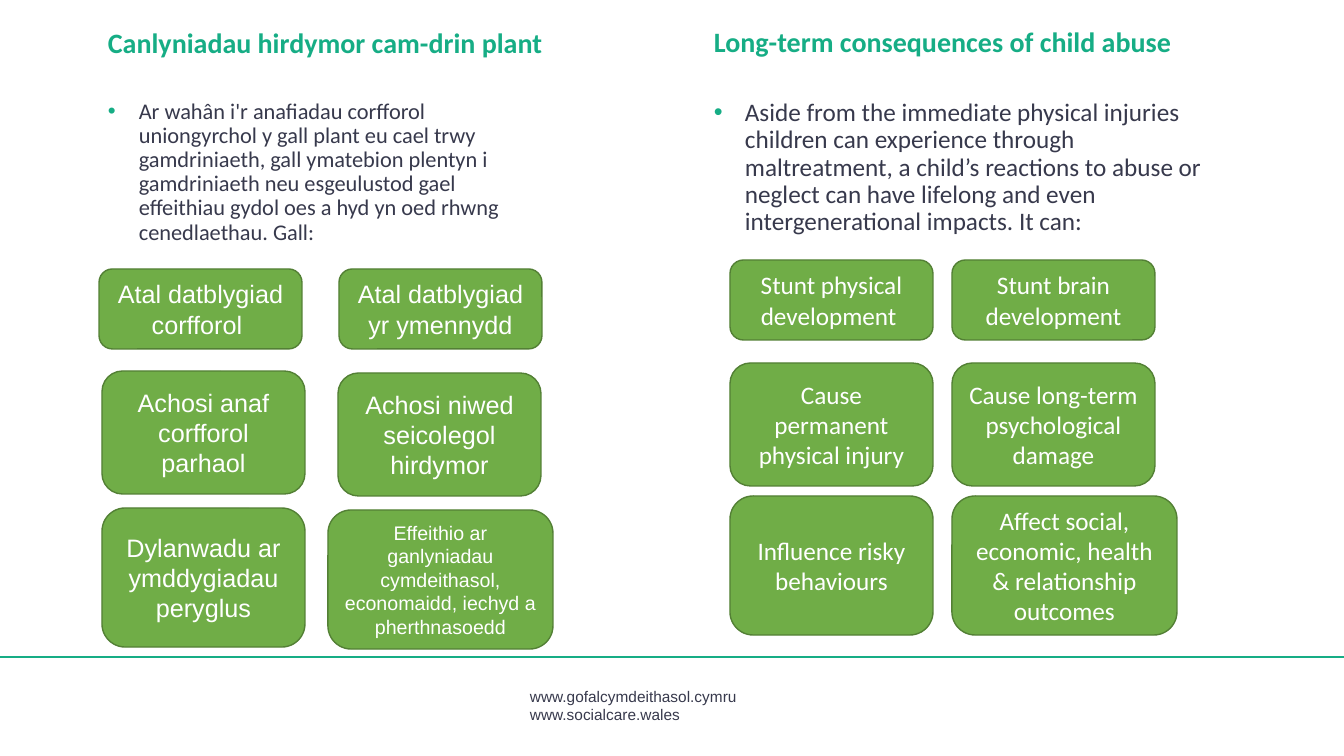
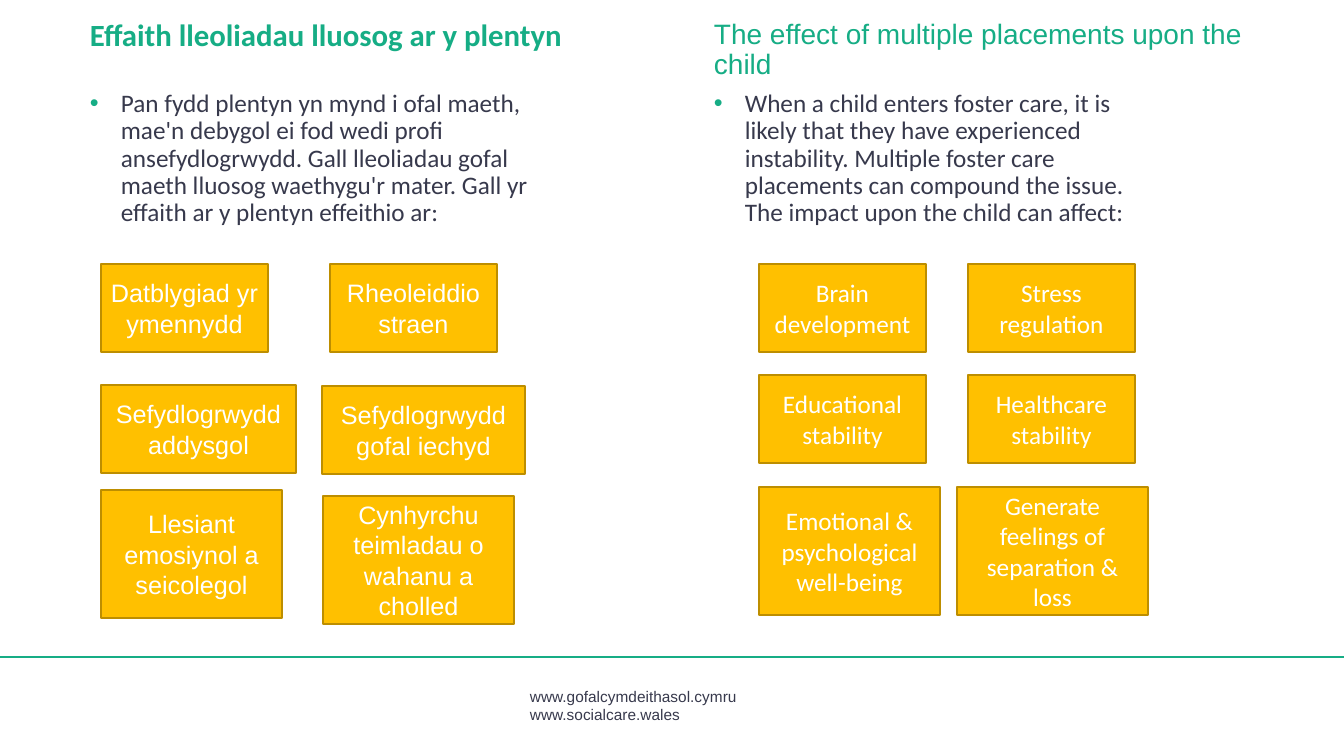
from lxml import etree
from pptx import Presentation
from pptx.dml.color import RGBColor
from pptx.enum.shapes import MSO_CONNECTOR, MSO_SHAPE
from pptx.enum.text import MSO_ANCHOR, PP_ALIGN
from pptx.oxml.ns import qn
from pptx.util import Emu, Pt

ROUND = MSO_SHAPE.ROUNDED_RECTANGLE
RECT = MSO_SHAPE.RECTANGLE
STRAIGHT = MSO_CONNECTOR.STRAIGHT
MIDDLE = MSO_ANCHOR.MIDDLE
CENTER = PP_ALIGN.CENTER

WIDTH, HEIGHT = 1344, 756
SCALE = 914400 / 100.8
TEAL, INK, WHITE = "16AD85", "37394C", "FFFFFF"
GREEN, MOSS = "70AD47", "538035"
GOLD, OCHRE = "FFC000", "BD8E00"
SANS, HUMAN = "Arial", "Calibri"
HEAD_H, BODY_H, INDENT = 64, 160, 31

# Card style: preset shape, fill, line, height of each row
ABUSE_STYLE = (ROUND, GREEN, MOSS, (80, 123, 139))
MOVES_STYLE = (RECT, GOLD, OCHRE, (88, 88, 128))

# Cards run row by row: left, top, width, text, then a text size if not 18
ABUSE_CY = [
    (99, 269, 203, "Atal datblygiad corfforol "),
    (339, 269, 203, "Atal datblygiad yr ymennydd"),
    (102, 371, 203, "Achosi anaf corfforol parhaol"),
    (338, 373, 203, "Achosi niwed seicolegol hirdymor"),
    (102, 508, 203, "Dylanwadu ar ymddygiadau peryglus"),
    (328, 510, 225, "Effeithio ar ganlyniadau cymdeithasol, economaidd, "
                    "iechyd a pherthnasoedd", 14),
]
ABUSE_EN = [
    (730, 260, 203, "Stunt physical development "),
    (952, 260, 203, "Stunt brain development"),
    (730, 363, 203, "Cause permanent physical injury"),
    (952, 363, 203, "Cause long-term psychological damage"),
    (730, 496, 203, "Influence risky behaviours"),
    (952, 496, 225, "Affect social, economic, health & relationship outcomes"),
]
MOVES_CY = [
    (101, 264, 167, "Datblygiad yr ymennydd"),
    (330, 264, 167, "Rheoleiddio straen"),
    (101, 385, 195, "Sefydlogrwydd addysgol"),
    (322, 386, 203, "Sefydlogrwydd gofal iechyd"),
    (101, 490, 181, "Llesiant emosiynol a seicolegol"),
    (323, 496, 191, "Cynhyrchu teimladau o wahanu a cholled"),
]
MOVES_EN = [
    (759, 264, 167, "Brain development"),
    (968, 264, 167, "Stress regulation"),
    (759, 375, 167, "Educational stability"),
    (968, 375, 167, "Healthcare stability"),
    (759, 487, 181, "Emotional & psychological well-being"),
    (957, 487, 191, "Generate feelings of separation & loss"),
]


def px(*sizes):
    return [Emu(round(size * SCALE)) for size in sizes]


def color(code):
    return RGBColor.from_string(code)


def style(para, face, size, ink, bold=False):
    font = para.font
    font.name, font.size, font.bold = face, Pt(size), bold
    font.color.rgb = color(ink)


def add_text(slide, box, lines):
    frame = slide.shapes.add_textbox(*px(*box)).text_frame
    frame.word_wrap = True
    frame.text = "\n".join(lines)
    return frame.paragraphs


def add_head(slide, box, text, face, size, bold):
    para = add_text(slide, box, [text])[0]
    para.line_spacing = 0.9
    style(para, face, size, TEAL, bold)


def add_bullet(para):
    """Give the paragraph a teal dot and a hanging indent."""
    props = para._p.get_or_add_pPr()
    indent = px(INDENT)[0]
    props.set("marL", str(indent))
    props.set("indent", str(-indent))
    tint = etree.SubElement(props, qn("a:buClr"))
    etree.SubElement(tint, qn("a:srgbClr"), val=TEAL)
    etree.SubElement(props, qn("a:buFont"), typeface=SANS)
    etree.SubElement(props, qn("a:buChar"), char="•")


def add_body(slide, box, text, size):
    para = add_text(slide, box, [text])[0]
    add_bullet(para)
    para.line_spacing = 0.9
    style(para, HUMAN, size, INK)


def add_card(slide, look, height, face, left, top, width, text, size=18):
    kind, fill, edge = look
    card = slide.shapes.add_shape(kind, *px(left, top, width, height))
    card.shadow.inherit = False
    card.fill.solid()
    card.fill.fore_color.rgb = color(fill)
    card.line.color.rgb = color(edge)
    card.line.width = Pt(1)
    frame = card.text_frame
    frame.word_wrap = True
    frame.vertical_anchor = MIDDLE
    frame.text = text
    para = frame.paragraphs[0]
    para.alignment = CENTER
    style(para, face, size, WHITE)


def add_cards(slide, theme, face, cards):
    *look, heights = theme
    for place, card in enumerate(cards):
        add_card(slide, look, heights[place // 2], face, *card)


def add_foot(slide):
    rule = slide.shapes.add_connector(STRAIGHT, *px(0, 657, WIDTH, 657))
    rule.line.color.rgb = color(TEAL)
    rule.line.width = Pt(1)
    etree.SubElement(rule._element.spPr, qn("a:effectLst"))
    sites = ["www.gofalcymdeithasol.cymru", "www.socialcare.wales"]
    for para in add_text(slide, (520, 682, 304, 46), sites):
        style(para, SANS, 11, INK)


def add_slide(deck):
    slide = deck.slides.add_slide(deck.slide_layouts[6])
    add_foot(slide)
    return slide


def abuse_slide(deck):
    slide = add_slide(deck)
    add_head(slide, (98, 24, 500, HEAD_H),
             "Canlyniadau hirdymor cam-drin plant", HUMAN, 20, True)
    add_head(slide, (704, 23, 564, HEAD_H),
             "Long-term consequences of child abuse", HUMAN, 20, True)
    add_body(slide, (98, 95, 454, BODY_H),
             "Ar wahân i'r anafiadau corfforol uniongyrchol y gall plant eu "
             "cael trwy gamdriniaeth, gall ymatebion plentyn i gamdriniaeth "
             "neu esgeulustod gael effeithiau gydol oes a hyd yn oed rhwng "
             "cenedlaethau. Gall:", 16)
    add_body(slide, (704, 95, 518, BODY_H),
             "Aside from the immediate physical injuries children can "
             "experience through maltreatment, a child’s reactions to abuse "
             "or neglect can have lifelong and even intergenerational "
             "impacts. It can:", 18)
    add_cards(slide, ABUSE_STYLE, SANS, ABUSE_CY)
    add_cards(slide, ABUSE_STYLE, HUMAN, ABUSE_EN)


def moves_slide(deck):
    slide = add_slide(deck)
    add_head(slide, (80, 15, 496, HEAD_H),
             "Effaith lleoliadau lluosog ar y plentyn", HUMAN, 22, True)
    add_head(slide, (704, 15, 560, HEAD_H),
             "The effect of multiple placements upon the child",
             SANS, 20, False)
    add_body(slide, (80, 86, 472, BODY_H),
             "Pan fydd plentyn yn mynd i ofal maeth, mae'n debygol ei fod "
             "wedi profi ansefydlogrwydd. Gall lleoliadau gofal maeth "
             "lluosog waethygu'r mater. Gall yr effaith ar y plentyn "
             "effeithio ar:", 18)
    add_body(slide, (704, 86, 472, BODY_H),
             "When a child enters foster care, it is likely that they have "
             "experienced instability. Multiple foster care placements can "
             "compound the issue. The impact upon the child can affect:", 18)
    add_cards(slide, MOVES_STYLE, SANS, MOVES_CY)
    add_cards(slide, MOVES_STYLE, HUMAN, MOVES_EN)


def main():
    deck = Presentation()
    deck.slide_width, deck.slide_height = px(WIDTH, HEIGHT)
    abuse_slide(deck)
    moves_slide(deck)
    deck.save("out.pptx")


if __name__ == "__main__":
    main()
